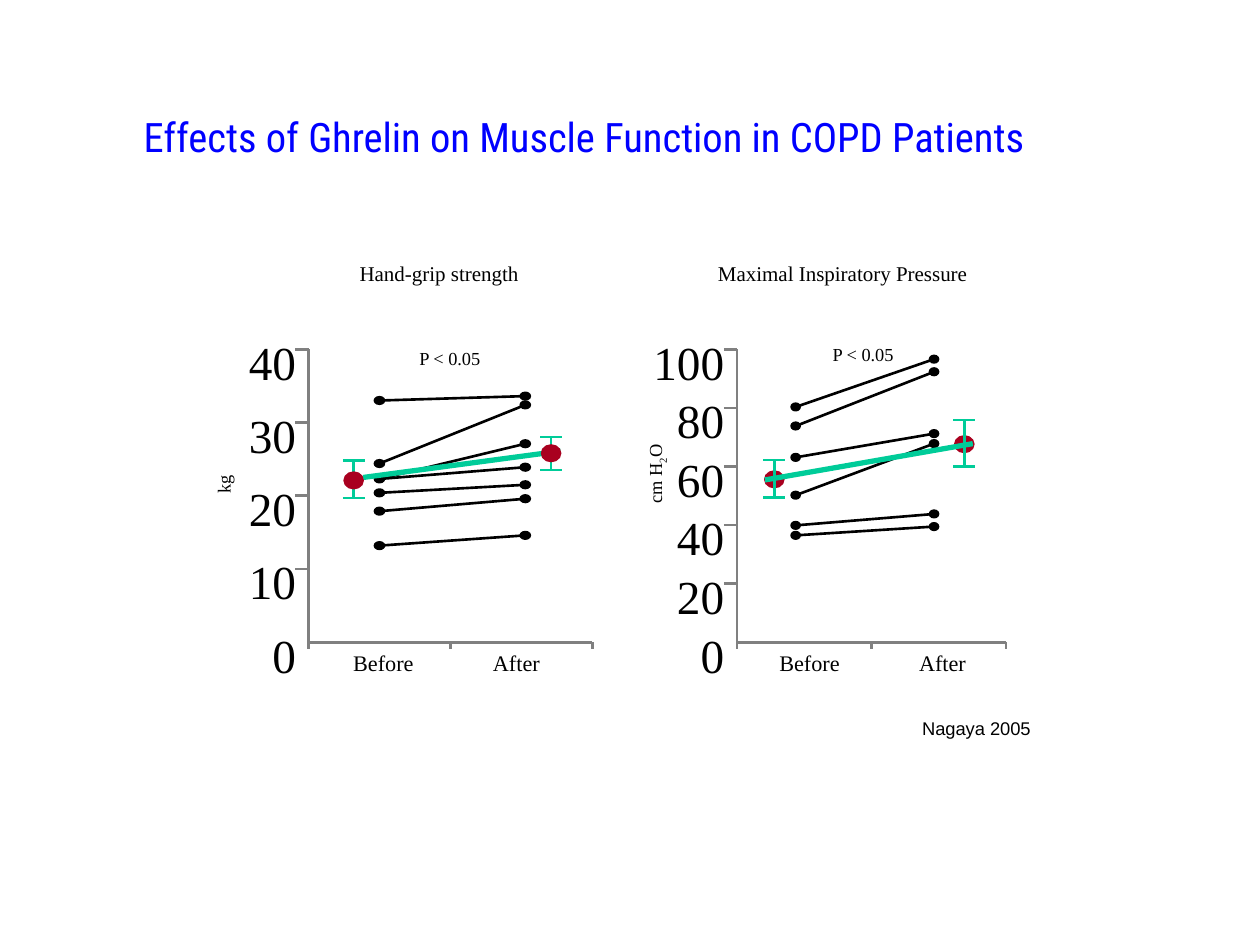
"""Build a slide with two before/after plots of muscle function under ghrelin."""
from dataclasses import dataclass

from lxml import etree
from pptx import Presentation
from pptx.dml.color import RGBColor
from pptx.enum.shapes import MSO_CONNECTOR, MSO_SHAPE
from pptx.enum.text import MSO_ANCHOR, MSO_AUTO_SIZE, PP_ALIGN
from pptx.oxml.ns import qn
from pptx.util import Cm, Pt

STRAIGHT = MSO_CONNECTOR.STRAIGHT
OVAL = MSO_SHAPE.OVAL
MIDDLE = MSO_ANCHOR.MIDDLE
FIT_SHAPE, NO_FIT = MSO_AUTO_SIZE.SHAPE_TO_FIT_TEXT, MSO_AUTO_SIZE.NONE
LEFT, CENTER, RIGHT = PP_ALIGN.LEFT, PP_ALIGN.CENTER, PP_ALIGN.RIGHT
TITLE_ONLY = 5
PLOT_TOP, BASELINE = 7.04, 12.95


@dataclass(frozen=True)
class Theme:
    """Colours, fonts and type sizes of the slide."""
    title_color: str = "0000FF"
    ink: str = "000000"
    axis: str = "808080"
    average: str = "00CC99"
    marker: str = "A9001F"
    title_font: str = "Roboto Condensed"
    plot_font: str = "Times New Roman"
    source_font: str = "Arial"
    title_size: float = 23.2
    heading_size: float = 12
    scale_size: float = 27
    category_size: float = 12.7
    note_size: float = 10.5


@dataclass(frozen=True)
class Plot:
    """One plot: positions in centimetres, measurements in its own unit."""
    heading: str
    heading_left: float
    heading_width: float
    unit: tuple
    unit_center: float
    unit_width: float
    axis_left: float
    axis_right: float
    scale_right: float
    maximum: int
    step: int
    subject_x: tuple
    dot_width: float
    subjects: tuple
    mean_x: tuple
    means: tuple
    error_ranges: tuple
    trend: tuple
    category_centers: tuple
    note_center: float
    note_top: float
    means_in_front: bool

    def y(self, value):
        """Return the height on the slide of a measured value."""
        return BASELINE - (BASELINE - PLOT_TOP) * value / self.maximum


THEME = Theme()
HAND_GRIP = Plot(
    heading="Hand-grip strength", heading_left=5.59, heading_width=6.53,
    unit=(("kg", 0),), unit_center=4.51, unit_width=0.99,
    axis_left=6.22, axis_right=11.94, scale_right=5.97, maximum=40, step=10,
    subject_x=(7.65, 10.59), dot_width=0.2,
    subjects=((33, 33.6), (24.4, 32.4), (22.3, 27.1), (22.3, 23.9),
              (20.4, 21.5), (17.9, 19.6), (13.2, 14.6)),
    mean_x=(7.13, 11.11), means=(22.1, 25.8),
    error_ranges=((19.7, 24.8), (23.5, 28)),
    trend=((7.32, 22.5), (11.3, 26.1)),
    category_centers=(7.73, 10.41), note_center=9.07, note_top=6.99,
    means_in_front=True)
INSPIRATORY = Plot(
    heading="Maximal Inspiratory Pressure", heading_left=13.56, heading_width=6.86,
    unit=(("cm H", 0), ("2", -25000), ("O", 0)), unit_center=13.21, unit_width=1.42,
    axis_left=14.86, axis_right=20.28, scale_right=14.6, maximum=100, step=20,
    subject_x=(16.04, 18.83), dot_width=0.18,
    subjects=((80.3, 96.6), (73.8, 92.3), (63.1, 71.2),
              (50.2, 67.8), (39.9, 43.8), (36.5, 39.5)),
    mean_x=(15.61, 19.44), means=(55.6, 67.6),
    error_ranges=((49.4, 62.2), (59.9, 75.8)),
    trend=((15.42, 55.4), (19.61, 67.8)),
    category_centers=(16.32, 19), note_center=17.4, note_top=6.91,
    means_in_front=False)


def add_run(paragraph, text, font_name, size, color, baseline=0):
    """Add one formatted run, raised or lowered by baseline."""
    run = paragraph.add_run()
    run.text = text
    run.font.name = font_name
    run.font.size = Pt(size)
    run.font.color.rgb = RGBColor.from_string(color)
    if baseline:
        run.font._element.set("baseline", str(baseline))


def add_label(shapes, box, runs, size, align=CENTER, wrap=False):
    """Add a text box without margins, holding (text, baseline) runs."""
    shape = shapes.add_textbox(*map(Cm, box))
    frame = shape.text_frame
    frame.margin_left = frame.margin_right = frame.margin_top = frame.margin_bottom = 0
    frame.word_wrap = wrap
    frame.auto_size = FIT_SHAPE
    paragraph = frame.paragraphs[0]
    paragraph.alignment = align
    for text, baseline in runs:
        add_run(paragraph, text, THEME.plot_font, size, THEME.ink, baseline)
    return shape


def add_line(shapes, start, end, color, width=1.5):
    """Add a straight line without shadow."""
    line = shapes.add_connector(STRAIGHT, *map(Cm, (*start, *end)))
    line.line.color.rgb = RGBColor.from_string(color)
    line.line.width = Pt(width)
    etree.SubElement(line._element.spPr, qn("a:effectLst"))


def add_dot(shapes, center_x, center_y, width, height, color):
    """Add a filled ellipse around a centre point."""
    dot = shapes.add_shape(OVAL, Cm(center_x - width / 2), Cm(center_y - height / 2),
                           Cm(width), Cm(height))
    dot.shadow.inherit = False
    dot.fill.solid()
    dot.fill.fore_color.rgb = RGBColor.from_string(color)
    dot.line.color.rgb = RGBColor.from_string(color)
    dot.line.width = Pt(1)


def add_axes(shapes, plot):
    """Add both axes with ticks, scale numbers and category names."""
    left, right = plot.axis_left, plot.axis_right
    add_line(shapes, (left, PLOT_TOP), (left, BASELINE), THEME.axis)
    add_line(shapes, (left, BASELINE), (right, BASELINE), THEME.axis)
    for x in (left, (left + right) / 2, right):
        add_line(shapes, (x, BASELINE), (x, BASELINE + 0.14), THEME.axis)
    for value in range(0, plot.maximum + 1, plot.step):
        y = plot.y(value)
        if value:
            add_line(shapes, (left - 0.27, y), (left, y), THEME.axis)
        width = 0.48 * len(str(value))
        add_label(shapes, (plot.scale_right - width, y - 0.33, width, 1.14),
                  ((str(value), 0),), THEME.scale_size, RIGHT)
    for name, center, width in zip(("Before", "After"), plot.category_centers, (1.24, 0.97)):
        add_label(shapes, (center - width / 2, 13.08, width, 0.53),
                  ((name, 0),), THEME.category_size)


def add_subjects(shapes, plot):
    """Add a line per subject, and one dot per distinct measurement."""
    before_x, after_x = plot.subject_x
    for before, after in plot.subjects:
        add_line(shapes, (before_x, plot.y(before)), (after_x, plot.y(after)), THEME.ink)
    for x, values in zip(plot.subject_x, zip(*plot.subjects)):
        for value in sorted(set(values)):
            add_dot(shapes, x, plot.y(value), plot.dot_width, 0.15, THEME.ink)


def add_means(shapes, plot):
    """Add the mean markers."""
    for x, value in zip(plot.mean_x, plot.means):
        add_dot(shapes, x, plot.y(value), 0.38, 0.33, THEME.marker)


def add_trend(shapes, plot):
    """Add the line of the means and its error bars."""
    start, end = ((x, plot.y(value)) for x, value in plot.trend)
    add_line(shapes, start, end, THEME.average, 3)
    for x, limits in zip(plot.mean_x, plot.error_ranges):
        low, high = map(plot.y, limits)
        add_line(shapes, (x, high), (x, low), THEME.average)
        for y in (low, high):
            add_line(shapes, (x - 0.22, y), (x + 0.22, y), THEME.average)


def add_plot(slide, plot):
    """Add one complete plot with its heading and unit."""
    add_label(slide.shapes, (plot.heading_left, 5.26, plot.heading_width, 0.51),
              ((plot.heading, 0),), THEME.heading_size, wrap=True)
    shapes = slide.shapes.add_group_shape().shapes
    add_axes(shapes, plot)
    layers = [add_subjects, add_trend]
    layers.insert(2 if plot.means_in_front else 0, add_means)
    for add_layer in layers:
        add_layer(shapes, plot)
    add_label(shapes, (plot.note_center - 0.64, plot.note_top, 1.28, 0.46),
              (("P < 0.05", 0),), THEME.note_size)
    unit = add_label(slide.shapes, (plot.unit_center - plot.unit_width / 2, 9.53 - 0.21 * (len(plot.unit) > 1),
                                    plot.unit_width, 0.46), plot.unit, THEME.note_size)
    unit.rotation = 270


def add_title(slide, text):
    """Place and format the title placeholder."""
    title = slide.shapes.title
    title.left, title.top, title.width, title.height = map(Cm, (2.64, 1.98, 21.59, 1.52))
    frame = title.text_frame
    frame.auto_size = NO_FIT
    frame.word_wrap = True
    frame.vertical_anchor = MIDDLE
    frame.paragraphs[0].alignment = LEFT
    add_run(frame.paragraphs[0], text, THEME.title_font, THEME.title_size, THEME.title_color)


def add_source(slide, text):
    """Add the right-aligned reference below the plots."""
    frame = slide.shapes.add_textbox(*map(Cm, (14.81, 14.33, 6.22, 0.71))).text_frame
    frame.word_wrap = True
    frame.auto_size = FIT_SHAPE
    frame.paragraphs[0].alignment = RIGHT
    add_run(frame.paragraphs[0], text, THEME.source_font, THEME.note_size, THEME.ink)


def main():
    """Build and save the presentation."""
    presentation = Presentation()
    presentation.slide_width, presentation.slide_height = Cm(25.4), Cm(19.05)
    slide = presentation.slides.add_slide(presentation.slide_layouts[TITLE_ONLY])
    add_title(slide, "Effects of Ghrelin on Muscle Function in COPD Patients")
    for plot in (HAND_GRIP, INSPIRATORY):
        add_plot(slide, plot)
    add_source(slide, "Nagaya 2005")
    presentation.save("out.pptx")


if __name__ == "__main__":
    main()
